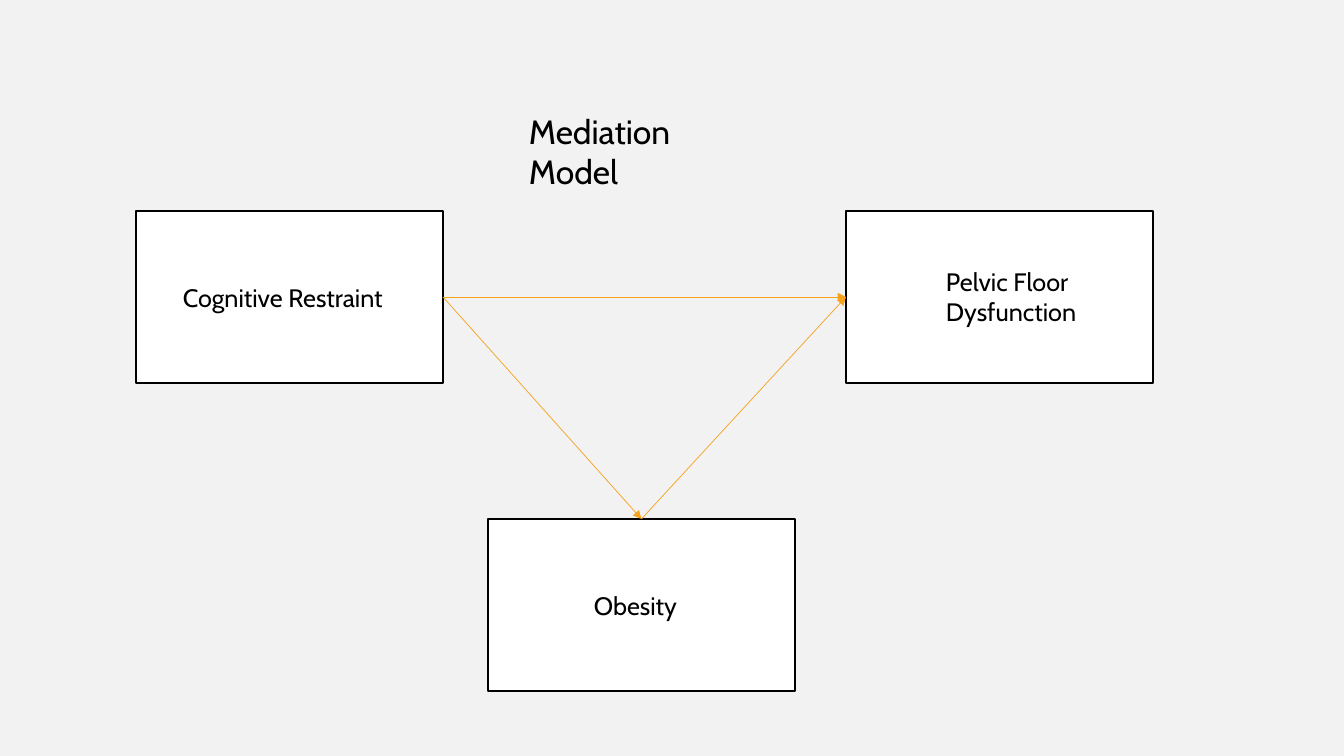
from dataclasses import dataclass

from pptx import Presentation
from pptx.dml.color import RGBColor
from pptx.enum.shapes import MSO_CONNECTOR, MSO_SHAPE
from pptx.enum.text import MSO_AUTO_SIZE
from pptx.oxml.ns import qn
from pptx.util import Emu, Pt
from lxml.etree import SubElement

TOP, LEFT, RIGHT = 0, 1, 3


def px(n):
    return Emu(round(n * 914400 / 100.8))


@dataclass(frozen=True)
class Theme:
    font: str = "Cabin"
    back: RGBColor = RGBColor.from_string("F2F2F2")
    fill: RGBColor = RGBColor.from_string("FFFFFF")
    ink: RGBColor = RGBColor.from_string("000000")
    arrow: RGBColor = RGBColor.from_string("F6A21D")
    title: int = 24
    label: int = 18


def write(frame, text, *, font, size, color):
    frame.word_wrap = True
    frame.auto_size = MSO_AUTO_SIZE.SHAPE_TO_FIT_TEXT
    run = frame.paragraphs[0].add_run()
    run.text = text
    run.font.name = font
    run.font.size = Pt(size)
    run.font.color.rgb = color


class Board:
    """Draws boxes, arrows and text on one slide in one style."""

    def __init__(self, slide, theme):
        self.theme = theme
        self.shapes = slide.shapes
        slide.background.fill.solid()
        slide.background.fill.fore_color.rgb = theme.back

    def box(self, x, y, w=307, h=172):
        box = self.shapes.add_shape(MSO_SHAPE.RECTANGLE, px(x), px(y), px(w), px(h))
        box.shadow.inherit = False
        box.fill.solid()
        box.fill.fore_color.rgb = self.theme.fill
        box.line.color.rgb = self.theme.ink
        box.line.width = Pt(1)
        return box

    def arrow(self, start, out, end, into):
        line = self.shapes.add_connector(MSO_CONNECTOR.STRAIGHT, 0, 0, 0, 0)
        line.begin_connect(start, out)
        line.end_connect(end, into)
        line.line.color.rgb = self.theme.arrow
        line.line.width = Pt(0.5)
        props = line._element.spPr
        SubElement(props.find(qn("a:ln")), qn("a:tailEnd"), type="triangle")
        SubElement(props, qn("a:effectLst"))

    def text(self, text, x, y, w, h, size):
        area = self.shapes.add_textbox(px(x), px(y), px(w), px(h))
        write(area.text_frame, text, font=self.theme.font, size=size,
              color=self.theme.ink)


def main():
    deck = Presentation()
    deck.slide_width, deck.slide_height = px(1344), px(756)
    theme = Theme()
    board = Board(deck.slides.add_slide(deck.slide_layouts[6]), theme)

    cause = board.box(136, 211)
    effect = board.box(846, 211)
    middle = board.box(488, 519)

    board.arrow(cause, RIGHT, effect, LEFT)
    board.arrow(cause, RIGHT, middle, TOP)
    board.arrow(middle, TOP, effect, LEFT)

    board.text("Cognitive Restraint", 173, 277, 232, 40, theme.label)
    board.text("Obesity", 584, 585, 236, 40, theme.label)
    board.text("Pelvic Floor Dysfunction", 936, 261, 247, 72, theme.label)
    board.text("Mediation Model", 519, 106, 250, 50, theme.title)

    deck.save("out.pptx")


if __name__ == "__main__":
    main()
